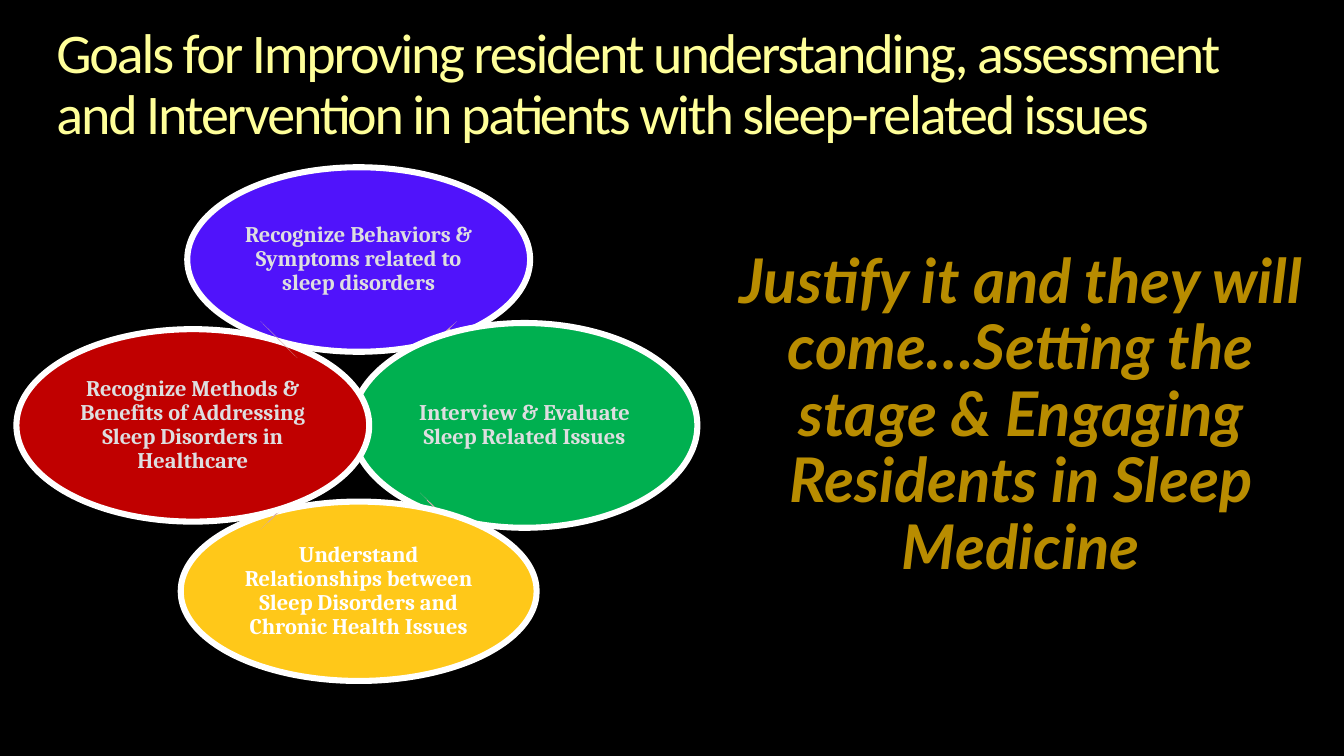
from pptx import Presentation
from pptx.dml.color import RGBColor
from pptx.enum.shapes import MSO_SHAPE
from pptx.enum.text import MSO_ANCHOR, MSO_AUTO_SIZE, PP_ALIGN
from pptx.oxml.ns import qn
from pptx.util import Cm, Pt

ELLIPSE, ARROW = MSO_SHAPE.OVAL, MSO_SHAPE.RIGHT_ARROW
TOP, MIDDLE = MSO_ANCHOR.TOP, MSO_ANCHOR.MIDDLE
LEFT, CENTER = PP_ALIGN.LEFT, PP_ALIGN.CENTER
NO_AUTOFIT = MSO_AUTO_SIZE.NONE

BLACK = RGBColor(0x00, 0x00, 0x00)
WHITE = RGBColor(0xFF, 0xFF, 0xFF)
PALE_YELLOW = RGBColor(0xFF, 0xFF, 0x99)
DARK_GOLD = RGBColor(0xB8, 0x8C, 0x00)
LIGHT_GRAY = RGBColor(0xDE, 0xDE, 0xE0)
DUSTY_PINK = RGBColor(0xD3, 0xAB, 0xAB)
VIOLET = RGBColor(0x50, 0x13, 0xFB)
GREEN = RGBColor(0x00, 0xB0, 0x50)
YELLOW = RGBColor(0xFF, 0xC8, 0x19)
RED = RGBColor(0xC0, 0x00, 0x00)

TITLE_FONT = {"name": "Calibri", "size": Pt(40)}
BODY_FONT = {"name": "Lato", "size": Pt(44), "bold": True, "italic": True}
GOAL_FONT = {"name": "Cambria", "size": Pt(16), "bold": True}

# Goal cycle: centre, distance to the ellipses, offset and length of the arrows (cm)
CYCLE_X, CYCLE_Y, RADIUS = 9.04, 10.72, 4.18
ARROW_DX, ARROW_DY, ARROW_LENGTH = 2.01, 2.16, 1.32

# Direction from the centre, size, fill, text colour, text
# then the arrow that follows: direction, thickness, rotation
GOALS = [
    ((0, -1), (8.64, 4.65), VIOLET, LIGHT_GRAY,
     "Recognize Behaviors & Symptoms related to sleep disorders",
     (1, -1), 0.1, 225),
    ((1, 0), (8.71, 5.16), GREEN, LIGHT_GRAY,
     "Interview & Evaluate Sleep Related Issues",
     (1, 1), 0.03, 315),
    ((0, 1), (8.97, 4.52), YELLOW, WHITE,
     "Understand Relationships between Sleep Disorders and Chronic Health Issues",
     (-1, 1), 0.03, 225),
    ((-1, 0), (8.89, 4.85), RED, LIGHT_GRAY,
     "Recognize Methods & Benefits of Addressing Sleep Disorders in Healthcare",
     (-1, -1), 0.01, 135),
]


def write_text(sp, text, font, color, align, anchor, inset=0):
    tf = sp.text_frame
    frame = {"word_wrap": True, "auto_size": NO_AUTOFIT, "vertical_anchor": anchor,
             "margin_left": inset, "margin_right": inset,
             "margin_top": inset, "margin_bottom": inset}
    for name, value in frame.items():
        setattr(tf, name, value)
    p = tf.paragraphs[0]
    p.alignment, p.line_spacing, p.space_before = align, 0.9, Pt(0)
    r = p.add_run()
    r.text = text
    for name, value in font.items():
        setattr(r.font, name, value)
    r.font.color.rgb = color
    return p, r


def place(sp, left, top, width, height):
    sp.left, sp.top, sp.width, sp.height = Cm(left), Cm(top), Cm(width), Cm(height)


def add_centered(s, kind, x, y, width, height, fill):
    sp = s.shapes.add_shape(kind, Cm(x - width / 2), Cm(y - height / 2),
                            Cm(width), Cm(height))
    sp.shadow.inherit = False
    sp.fill.solid()
    sp.fill.fore_color.rgb = fill
    return sp


def add_goal(s, direction, size, fill, color, text):
    dx, dy = direction
    sp = add_centered(s, ELLIPSE, CYCLE_X + dx * RADIUS, CYCLE_Y + dy * RADIUS,
                      *size, fill)
    sp.line.color.rgb = WHITE
    sp.line.width = Pt(4.33)
    write_text(sp, text, GOAL_FONT, color, CENTER, MIDDLE, Cm(0.05))


def add_arrow(s, direction, thickness, rotation):
    dx, dy = direction
    sp = add_centered(s, ARROW, CYCLE_X + dx * ARROW_DX, CYCLE_Y + dy * ARROW_DY,
                      thickness, ARROW_LENGTH, DUSTY_PINK)
    sp.adjustments[0] = 0.6
    sp.line.fill.background()
    sp.rotation = rotation


def main():
    prs = Presentation()
    prs.slide_width, prs.slide_height = Cm(33.87), Cm(19.05)
    s = prs.slides.add_slide(prs.slide_layouts[1])
    s.background.fill.solid()
    s.background.fill.fore_color.rgb = BLACK

    # Title
    title = s.shapes.title
    place(title, 1.42, 0.64, 31.04, 3.07)
    _, r = write_text(
        title,
        "Goals for Improving resident understanding, assessment "
        "and Intervention in patients with sleep-related issues",
        TITLE_FONT, PALE_YELLOW, LEFT, TOP)
    r._r.get_or_add_rPr().set("spc", "-150")

    # Goal cycle
    for direction, size, fill, color, text, *arrow in GOALS:
        add_goal(s, direction, size, fill, color, text)
        add_arrow(s, *arrow)

    # Message on the right, without a bullet
    body = s.placeholders[1]
    place(body, 18.29, 6.3, 14.88, 9.78)
    p, _ = write_text(
        body,
        "Justify it and they will come…Setting the stage & "
        "Engaging Residents in Sleep Medicine",
        BODY_FONT, DARK_GOLD, CENTER, TOP)
    pPr = p._p.get_or_add_pPr()
    pPr.set("marL", "0")
    pPr.set("indent", "0")
    pPr.append(pPr.makeelement(qn("a:buNone"), {}))

    prs.save("out.pptx")


if __name__ == "__main__":
    main()
